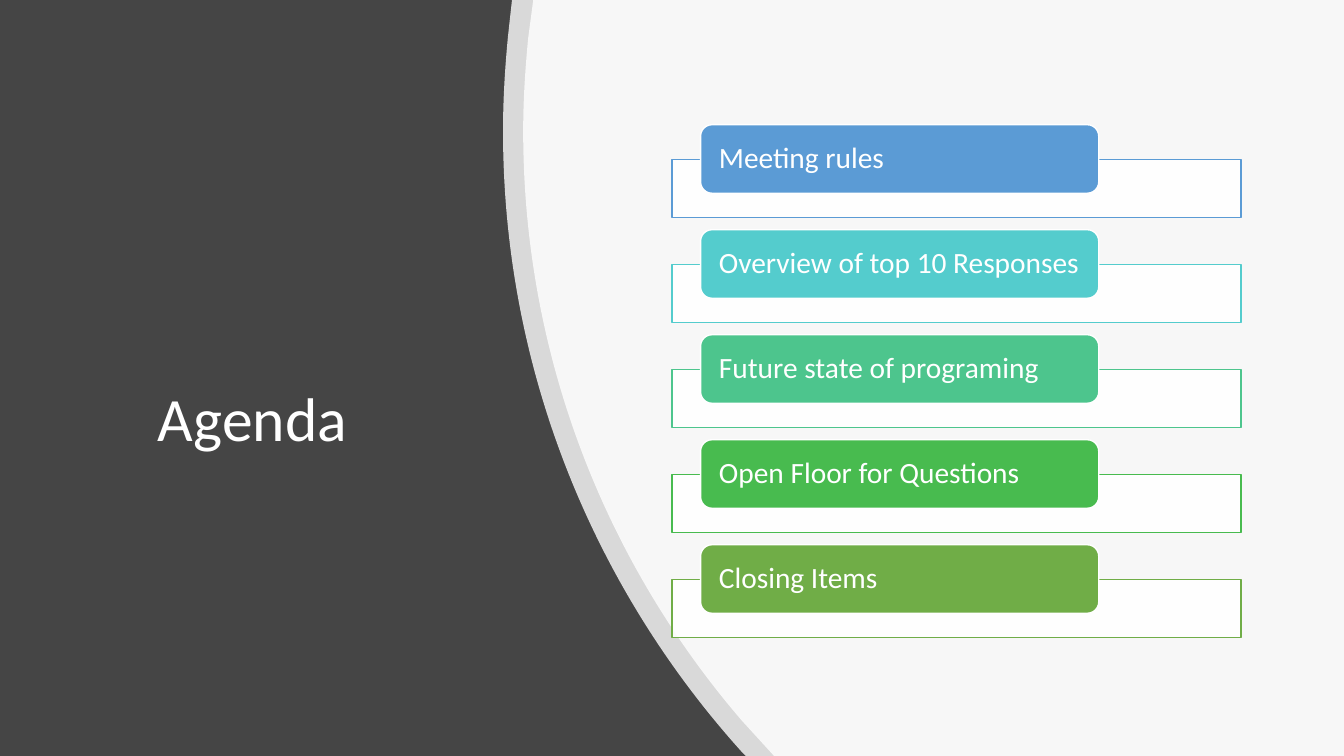
from dataclasses import dataclass

from lxml import etree
from pptx import Presentation
from pptx.dml.color import RGBColor
from pptx.enum.shapes import MSO_SHAPE
from pptx.enum.text import MSO_ANCHOR, MSO_AUTO_SIZE, PP_ALIGN
from pptx.oxml.ns import qn
from pptx.shapes.autoshape import Shape
from pptx.slide import Slide
from pptx.text.text import TextFrame
from pptx.util import Inches, Pt

RECT = MSO_SHAPE.RECTANGLE
ROUND = MSO_SHAPE.ROUNDED_RECTANGLE
MIDDLE = MSO_ANCHOR.MIDDLE
NO_FIT = MSO_AUTO_SIZE.NONE
LEFT = PP_ALIGN.LEFT
CENTER = PP_ALIGN.CENTER

WIDE = Inches(13.333)
HIGH = Inches(7.5)
TITLE_ONLY = 5
PITCH = 13.89

Point = tuple[float, float]
Knots = tuple[Point, Point, Point]


@dataclass(frozen=True)
class Theme:
    dark: str = "454545"
    white: str = "FFFFFF"
    font: str = "Calibri"
    title: float = 44
    label: float = 21
    line: float = 1
    veil: int = 80
    panel: int = 90


@dataclass(frozen=True)
class Box:
    left: float
    top: float
    width: float
    height: float

    def down(self, share: float) -> "Box":
        return Box(self.left, self.top + share, self.width, self.height)

    def place(self) -> tuple[int, int, int, int]:
        return (*spot((self.left, self.top)), *spot((self.width, self.height)))


@dataclass(frozen=True)
class Item:
    text: str
    color: str


@dataclass(frozen=True)
class Curve:
    top: Point
    base: Point
    start: Point
    low: Knots
    high: Knots


THEME = Theme()
TITLE = Box(9.64, 31.87, 18.3, 47.87)
PANEL = Box(50, 21.07, 42.33, 7.7)
LABEL = Box(52.13, 16.5, 29.63, 9.07)
ITEMS = (
    Item("Meeting rules", "5B9BD5"),
    Item("Overview of top 10 Responses", "54CCCD"),
    Item("Future state of programing", "4DC58D"),
    Item("Open Floor for Questions", "48BB4F"),
    Item("Closing Items", "70AD47"),
)
CURVES = (
    Curve((38.1, 0), (55.5, 100), (55.2, 99.47),
          ((44.18, 77.73), (37.43, 48.93), (37.43, 17.33)),
          ((37.43, 13.07), (37.58, 8.93), (37.8, 4.8))),
    Curve((39.68, 0), (57.6, 100), (55.2, 95.33),
          ((45.08, 74.4), (38.93, 47.2), (38.93, 17.33)),
          ((38.93, 13.2), (39.08, 9.2), (39.3, 5.07))),
)


def spot(point: Point) -> tuple[int, int]:
    return round(WIDE * point[0] / 100), round(HIGH * point[1] / 100)


def bend(shape: Shape, line: etree.ElementBase, knots: Knots) -> None:
    arc = etree.Element(qn("a:cubicBezTo"))
    for knot in knots:
        x, y = spot(knot)
        etree.SubElement(arc, qn("a:pt"), x=str(x - shape.left), y=str(y - shape.top))
    line.getparent().replace(line, arc)


def paint(shape: Shape, fill: str, line: str = "", alpha: int = 100) -> None:
    shape.shadow.inherit = False
    shape.fill.solid()
    shape.fill.fore_color.rgb = RGBColor.from_string(fill)
    if alpha < 100:
        tone = shape.element.spPr.find(qn("a:solidFill")).find(qn("a:srgbClr"))
        etree.SubElement(tone, qn("a:alpha"), val=str(alpha * 1000))
    if line:
        shape.line.color.rgb = RGBColor.from_string(line)
        shape.line.width = Pt(THEME.line)
    else:
        shape.line.fill.background()


def write(frame: TextFrame, text: str, *, size: float, align: PP_ALIGN,
          inset: float = 0.75) -> None:
    frame.word_wrap = True
    frame.auto_size = NO_FIT
    frame.vertical_anchor = MIDDLE
    frame.margin_left = frame.margin_right = round(WIDE * inset / 100)
    frame.margin_top = frame.margin_bottom = 0
    line = frame.paragraphs[0]
    line.alignment = align
    line.line_spacing = 0.9
    run = line.add_run()
    run.text = text
    run.font.name = THEME.font
    run.font.size = Pt(size)
    run.font.color.rgb = RGBColor.from_string(THEME.white)


def sweep(slide: Slide, curve: Curve) -> None:
    edge = ((100, 0), (100, 100), curve.base, curve.start,
            curve.low[-1], curve.high[-1])
    pen = slide.shapes.build_freeform(*spot(curve.top), scale=1.0)
    pen.add_line_segments([spot(point) for point in edge], close=True)
    shape = pen.convert_to_shape()
    lines = list(shape.element.iter(qn("a:lnTo")))
    ends = lines[len(edge) - 2:len(edge)]
    for line, knots in zip(ends, (curve.low, curve.high)):
        bend(shape, line, knots)
    paint(shape, THEME.white, alpha=THEME.veil)


def card(slide: Slide, item: Item, row: int) -> None:
    panel = slide.shapes.add_shape(RECT, *PANEL.down(row * PITCH).place())
    paint(panel, THEME.white, item.color, THEME.panel)
    label = slide.shapes.add_shape(ROUND, *LABEL.down(row * PITCH).place())
    paint(label, item.color, THEME.white)
    write(label.text_frame, item.text, size=THEME.label, align=LEFT, inset=1.12)


def main() -> None:
    deck = Presentation()
    deck.slide_width, deck.slide_height = WIDE, HIGH
    slide = deck.slides.add_slide(deck.slide_layouts[TITLE_ONLY])
    back = slide.background.fill
    back.solid()
    back.fore_color.rgb = RGBColor.from_string(THEME.dark)

    title = slide.shapes.title
    title.left, title.top, title.width, title.height = TITLE.place()
    write(title.text_frame, "Agenda", size=THEME.title, align=CENTER)

    for curve in CURVES:
        sweep(slide, curve)
    for row, item in enumerate(ITEMS):
        card(slide, item, row)
    deck.save("out.pptx")


if __name__ == "__main__":
    main()
